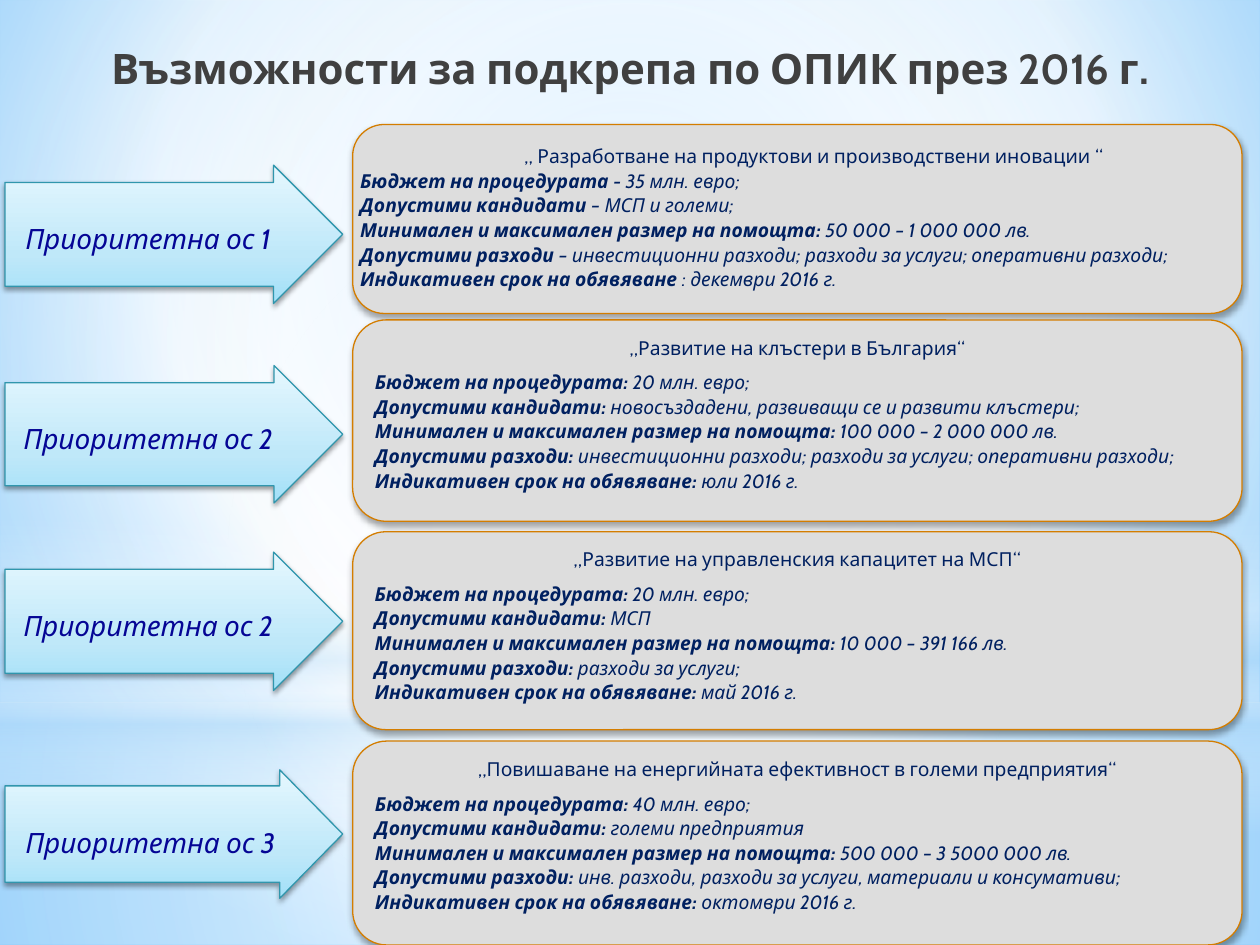
from lxml import etree
from pptx import Presentation
from pptx.dml.color import RGBColor
from pptx.enum.shapes import MSO_SHAPE
from pptx.enum.text import MSO_ANCHOR, PP_ALIGN
from pptx.oxml.ns import qn
from pptx.util import Cm, Pt

RECTANGLE, ELLIPSE = MSO_SHAPE.RECTANGLE, MSO_SHAPE.OVAL
ARROW, ROUNDED = MSO_SHAPE.RIGHT_ARROW, MSO_SHAPE.ROUNDED_RECTANGLE
TOP, MIDDLE = MSO_ANCHOR.TOP, MSO_ANCHOR.MIDDLE
LEFT, CENTER = PP_ALIGN.LEFT, PP_ALIGN.CENTER

WIDTH, HEIGHT = 25.4, 19.05
MIDPOINT = (50, 50, 50, 50)
CARD_LEFT, CARD_WIDTH = 7.11, 17.93
LABELS = (
    "Бюджет на процедурата",
    "Допустими кандидати",
    "Минимален и максимален размер на помощта",
    "Допустими разходи",
    "Индикативен срок на обявяване",
)
COLONS = (": ",) * len(LABELS)

BACKDROP = [
    (RECTANGLE, 14.17, 4.88, [(0, "FFFFFF", 91), (37, "FFFFFF", 76), (100, "B4DCFA", 79)], MIDPOINT),
    (RECTANGLE, 0, 14.17, [(0, "FFFFFF", 89), (48, "FFFFFF", 62), (100, "B4DCFA", 79)], MIDPOINT),
    (RECTANGLE, 10.46, 6.35, [(0, "FFFFFF", 0), (29, "FFFFFF", 30), (45, "B4DCFA", 40),
                              (55, "FFFFFF", 26), (65, "B4DCFA", 60), (100, "FFFFFF", 0)], None),
    (ELLIPSE, 4.45, 14.17, [(0, "FFFFFF", 100), (56, "FFFFFF", 0)], MIDPOINT),
]

PROCEDURES = [
    ("Приоритетна ос 1", (3.33, 2.79, 0.5), (2.51, 3.81),
     "„ Разработване на продуктови и производствени иновации “",
     (" - ", " ", ": ", " ", " "),
     ("35 млн. евро;", "– МСП и големи;", "50 000 – 1 000 000 лв.",
      "– инвестиционни разходи; разходи за услуги; оперативни разходи;",
      ": декември 2016 г.")),
    ("Приоритетна ос 2", (7.37, 2.77, 0.5), (6.45, 4.06),
     "„Развитие на клъстери в България“", COLONS,
     ("20 млн. евро;", "новосъздадени, развиващи се и развити клъстери;",
      "100 000 – 2 000 000 лв.",
      "инвестиционни разходи; разходи за услуги; оперативни разходи;",
      "юли 2016 г.")),
    ("Приоритетна ос 2", (11.13, 2.79, 0.5), (10.72, 3.99),
     "„Развитие на управленския капацитет на МСП“", COLONS,
     ("20 млн. евро;", "МСП", "10 000 – 391 166 лв.", "разходи за услуги;",
      "май 2016 г.")),
    ("Приоритетна ос 3", (15.52, 2.59, 0.49), (14.94, 4.11),
     "„Повишаване на енергийната ефективност в големи предприятия“", COLONS,
     ("40 млн. евро;", "големи предприятия", "500 000 – 3 5000 000 лв.",
      "инв. разходи, разходи за услуги, материали и консумативи;",
      "октомври 2016 г.")),
]


def rgb(value):
    return RGBColor.from_string(value)


def add_node(parent, tag, **attributes):
    node = etree.SubElement(parent, qn(tag))
    for key, value in attributes.items():
        node.set(key, str(value))
    return node


def add_color(parent, value, opacity):
    color = add_node(parent, "a:srgbClr", val=value)
    if opacity < 100:
        add_node(color, "a:alpha", val=opacity * 1000)


def fill_gradient(fill, element, stops, focus=None, angle=90):
    fill.gradient()
    gradient = element.find(".//" + qn("a:gradFill"))
    for child in list(gradient):
        gradient.remove(child)
    stop_list = add_node(gradient, "a:gsLst")
    for position, value, opacity in stops:
        add_color(add_node(stop_list, "a:gs", pos=position * 1000), value, opacity)
    if focus:
        path = add_node(gradient, "a:path", path="circle")
        add_node(path, "a:fillToRect", **{side: share * 1000 for side, share in zip("ltrb", focus)})
    else:
        add_node(gradient, "a:lin", ang=angle * 60000, scaled=0)


class SlideBuilder:
    font = "Cabin"
    navy = "002060"

    def __init__(self, slide):
        self.slide = slide

    def background(self, stops, focus):
        fill_gradient(self.slide.background.fill, self.slide.element, stops, focus)

    def shape(self, kind, left, top, width, height):
        shape = self.slide.shapes.add_shape(kind, Cm(left), Cm(top), Cm(width), Cm(height))
        shape.shadow.inherit = False
        return shape

    def layer(self, kind, top, height, stops, focus):
        layer = self.shape(kind, 0, top, WIDTH, height)
        fill_gradient(layer.fill, layer.element, stops, focus)
        layer.line.fill.background()

    def outline(self, shape, color, opacity, distance):
        shape.line.color.rgb = rgb(color)
        shape.line.width = Pt(0.75)
        effects = shape.element.find(".//" + qn("a:effectLst"))
        shadow = add_node(effects, "a:outerShdw", blurRad=Pt(3.1), dist=Pt(distance),
                          dir=5400000, rotWithShape=0)
        add_color(shadow, "000000", opacity)

    def text_box(self, left, top, width, height):
        box = self.slide.shapes.add_textbox(Cm(left), Cm(top), Cm(width), Cm(height))
        frame = box.text_frame
        frame.word_wrap = True
        frame.vertical_anchor = MIDDLE
        return frame

    def style(self, paragraph, size, color, align=CENTER, bold=None, italic=None):
        paragraph.alignment = align
        font = paragraph.font
        font.name, font.size, font.bold, font.italic = self.font, Pt(size), bold, italic
        font.color.rgb = rgb(color)

    def title(self, text):
        heading = self.text_box(0, 0, WIDTH, 2.72).paragraphs[0]
        heading.text = text
        self.style(heading, 24, "404040", bold=True)

    def arrow(self, text, top, height, head):
        arrow = self.shape(ARROW, 0.1, top, 6.81, height)
        arrow.adjustments[0], arrow.adjustments[1] = 0.75, head
        fill_gradient(arrow.fill, arrow.element,
                      [(0, "A2E0F8", 100), (35, "BFE8F9", 100), (100, "E5F7FE", 100)], angle=270)
        self.outline(arrow, "3096AD", 38, 1.6)
        frame = arrow.text_frame
        frame.vertical_anchor = TOP
        frame.margin_top = Cm(0.79)
        axis = frame.paragraphs[0]
        axis.text = text
        self.style(axis, 16, "050595", italic=True)

    def card(self, top, height):
        card = self.shape(ROUNDED, CARD_LEFT, top, CARD_WIDTH, height)
        card.fill.solid()
        card.fill.fore_color.rgb = rgb("DDDDDD")
        self.outline(card, "D47D00", 35, 1.8)
        card.text_frame.vertical_anchor = TOP
        return card.text_frame

    def wide_text(self, top, height):
        frame = self.text_box(CARD_LEFT, top, 18.59, height)
        frame.margin_left = frame.margin_right = Cm(0.15)
        frame.margin_top = frame.margin_bottom = Cm(0.08)
        return frame

    def space(self, paragraph, line_spacing):
        paragraph.line_spacing = line_spacing
        paragraph.space_after = Pt(2.2)

    def details(self, frame, name, separators, values, compact):
        heading = frame.paragraphs[0]
        heading.text = name
        self.style(heading, 11, self.navy)
        if compact:
            self.space(heading, 0.9)
        for row, (label, separator, value) in enumerate(zip(LABELS, separators, values)):
            detail = frame.add_paragraph()
            self.style(detail, 11, self.navy, LEFT, italic=True)
            self.space(detail, 0.9 if row or compact else 1.5)
            for text, bold in ((label + separator, True), (value, False)):
                run = detail.add_run()
                run.text = text
                run.font.bold = bold


def main():
    deck = Presentation()
    deck.slide_width, deck.slide_height = Cm(WIDTH), Cm(HEIGHT)
    builder = SlideBuilder(deck.slides.add_slide(deck.slide_layouts[6]))
    builder.background([(0, "9ED5FF", 100), (60, "FFFFFF", 100), (100, "5BB9FF", 100)],
                       (20, 10, 20, 60))
    for layer in BACKDROP:
        builder.layer(*layer)
    builder.title("Възможности за подкрепа по ОПИК през 2016 г.")
    for index, (axis, arrow, card, name, separators, values) in enumerate(PROCEDURES):
        builder.arrow(axis, *arrow)
        frame = builder.card(*card)
        compact = index == 0
        if compact:
            frame = builder.wide_text(*card)
        builder.details(frame, name, separators, values, compact)
    deck.save("out.pptx")


if __name__ == "__main__":
    main()
